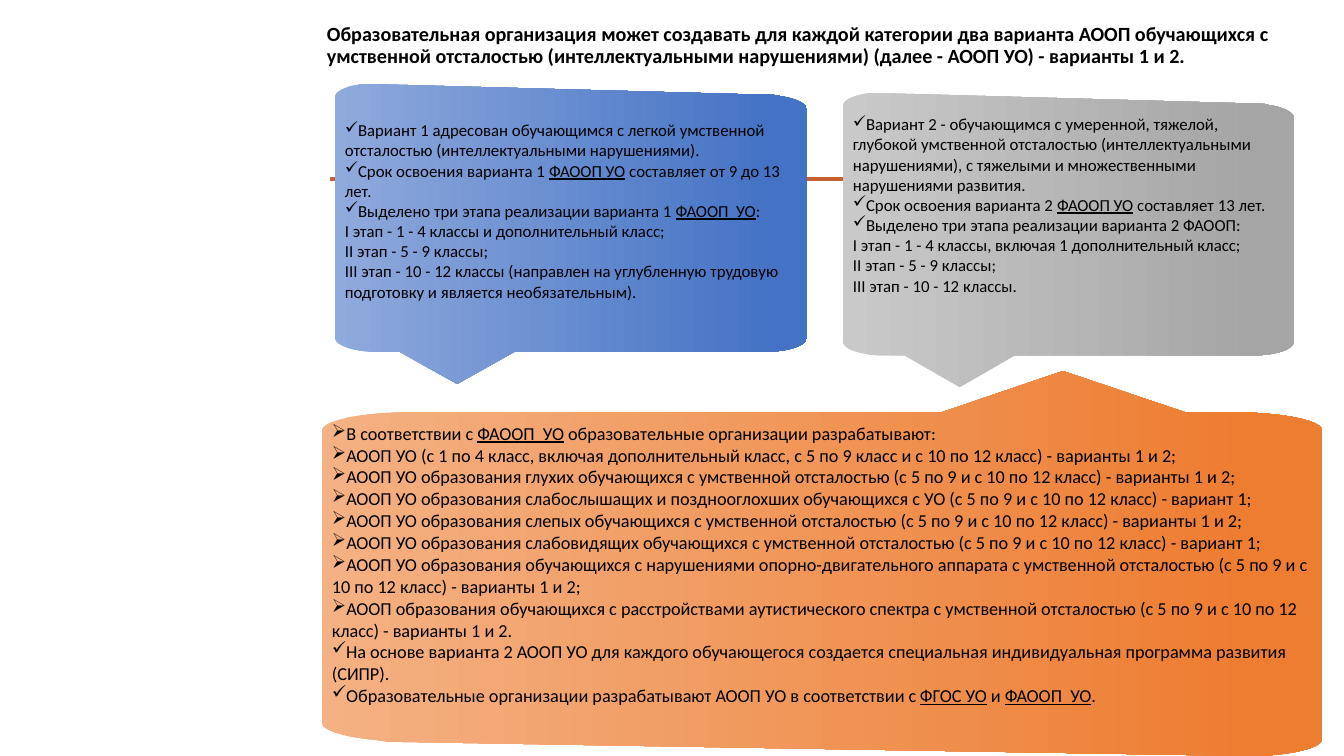
from lxml import etree
from pptx import Presentation, util as u
from pptx.dml.color import RGBColor
from pptx.enum import shapes, text
from pptx.oxml.ns import qn

PX = 914400 / 100.8  # EMU in one px
FONT = "Calibri"
BLACK = RGBColor(0x00, 0x00, 0x00)
RUST = RGBColor(0xC5, 0x60, 0x31)
BLUES = RGBColor(0x8F, 0xAA, 0xDC), RGBColor(0x44, 0x72, 0xC4)
GREYS = RGBColor(0xC9, 0xC9, 0xC9), RGBColor(0xA5, 0xA5, 0xA5)
ORANGES = RGBColor(0xF4, 0xB1, 0x83), RGBColor(0xED, 0x7D, 0x31)

# Callout outline in thousandths of its box: one point is a straight edge,
# three are a Bezier curve.
START = (75, 0)
OUTLINE = [
    [(934, 37)], [(944, 41)],
    [(977, 48), (1000, 66), (1000, 85)], [(1000, 846)],
    [(1000, 872), (960, 893), (908, 893)],
    [(380, 893)], [(259, 1000)], [(137, 893)], [(92, 893)],
    [(40, 893), (0, 872), (0, 846)], [(0, 44)],
    [(0, 23), (24, 7), (56, 1)],
]
CURVE_STEPS = 12

TITLE = ("Образовательная организация может создавать для каждой категории два варианта "
         "АООП обучающихся с умственной отсталостью (интеллектуальными нарушениями) "
         "(далее - АООП УО) - варианты 1 и 2.")

# Each line is (bullet, words); words between underscores are underlined.
VARIANT_1 = [
    ("✓", "Вариант 1 адресован обучающимся с легкой умственной отсталостью (интеллектуальными нарушениями)."),
    ("✓", "Срок освоения варианта 1 _ФАООП УО_ составляет от 9 до 13 лет."),
    ("✓", "Выделено три этапа реализации варианта 1 _ФАООП  УО_:"),
    ("", "I этап - 1 - 4 классы и дополнительный класс;"),
    ("", "II этап - 5 - 9 классы;"),
    ("", "III этап - 10 - 12 классы (направлен на углубленную трудовую подготовку и является необязательным)."),
]
VARIANT_2 = [
    ("✓", "Вариант 2 - обучающимся с умеренной, тяжелой, глубокой умственной отсталостью "
          "(интеллектуальными нарушениями), с тяжелыми и множественными нарушениями развития."),
    ("✓", "Срок освоения варианта 2 _ФАООП УО_ составляет 13 лет."),
    ("✓", "Выделено три этапа реализации варианта 2 ФАООП:"),
    ("", "I этап - 1 - 4 классы, включая 1 дополнительный класс;"),
    ("", "II этап - 5 - 9 классы;"),
    ("", "III этап - 10 - 12 классы."),
]
PROGRAMMES = [
    ("➢", "В соответствии с _ФАООП  УО_ образовательные организации разрабатывают:"),
    ("➢", "АООП УО (с 1 по 4 класс, включая дополнительный класс, с 5 по 9 класс и с 10 по 12 класс) - варианты 1 и 2;"),
    ("➢", "АООП УО образования глухих обучающихся с умственной отсталостью (с 5 по 9 и с 10 по 12 класс) - варианты 1 и 2;"),
    ("➢", "АООП УО образования слабослышащих и позднооглохших обучающихся с УО (с 5 по 9 и с 10 по 12 класс) - вариант 1;"),
    ("➢", "АООП УО образования слепых обучающихся с умственной отсталостью (с 5 по 9 и с 10 по 12 класс) - варианты 1 и 2;"),
    ("➢", "АООП УО образования слабовидящих обучающихся с умственной отсталостью (с 5 по 9 и с 10 по 12 класс) - вариант 1;"),
    ("➢", "АООП УО образования обучающихся с нарушениями опорно-двигательного аппарата "
          "с умственной отсталостью (с 5 по 9 и с 10 по 12 класс) - варианты 1 и 2;"),
    ("➢", "АООП образования обучающихся с расстройствами аутистического спектра "
          "с умственной отсталостью (с 5 по 9 и с 10 по 12 класс) - варианты 1 и 2."),
    ("✓", "На основе варианта 2 АООП УО для каждого обучающегося создается "
          "специальная индивидуальная программа развития (СИПР)."),
    ("✓", "Образовательные организации разрабатывают АООП УО в соответствии с _ФГОС УО_ и _ФАООП  УО_."),
]


def px(n):
    return u.Emu(round(n * PX))


def outline_points():
    """Points of the callout outline, with its curves cut into short edges."""
    points = [START]
    for segment in OUTLINE:
        if len(segment) == 1:
            points += segment
            continue
        controls = [points[-1], *segment]
        for step in range(1, CURVE_STEPS + 1):
            t = step / CURVE_STEPS
            weights = (1 - t) ** 3, 3 * t * (1 - t) ** 2, 3 * t * t * (1 - t), t ** 3
            points.append(tuple(sum(k * c[axis] for k, c in zip(weights, controls))
                                for axis in (0, 1)))
    return points


def style_font(p, size, bold=False):
    p.font.name = FONT
    p.font.size = u.Pt(size)
    p.font.bold = bold
    p.font.color.rgb = BLACK


def add_lines(tf, lines, size):
    for i, (bullet, words) in enumerate(lines):
        p = tf.paragraphs[0] if i == 0 else tf.add_paragraph()
        p.alignment = text.PP_ALIGN.LEFT
        if bullet:
            etree.SubElement(p._p.get_or_add_pPr(), qn("a:buChar")).set("char", bullet)
        style_font(p, size)
        for j, part in enumerate(words.split("_")):
            r = p.add_run()
            r.text = part
            if j % 2:
                r.font.underline = True


def add_callout(s, x, y, w, h, colors, lines, size, text_top, turned=False):
    """Gradient callout; turned rotates the outline by half a turn, not the text."""
    points = outline_points()
    if turned:
        points = [(1000 - a, 1000 - b) for a, b in points]
    corners = [(px(x + a * w / 1000), px(y + b * h / 1000)) for a, b in points]
    builder = s.shapes.build_freeform(*corners[0])
    builder.add_line_segments(corners[1:], close=True)
    sp = builder.convert_to_shape()
    sp.shadow.inherit = False
    sp.line.fill.background()
    sp.fill.gradient()
    sp.fill.gradient_angle = 0
    for stop, position, color in zip(sp.fill.gradient_stops, (0, 0.93), colors):
        stop.position = position
        stop.color.rgb = color
    tf = sp.text_frame
    tf.word_wrap = True
    tf.vertical_anchor = text.MSO_ANCHOR.TOP
    tf.margin_top = px(text_top)
    add_lines(tf, lines, size)


def add_title(s, x, y, w, h):
    tf = s.shapes.add_textbox(px(x), px(y), px(w), px(h)).text_frame
    tf.word_wrap = True
    tf.vertical_anchor = text.MSO_ANCHOR.MIDDLE
    p = tf.paragraphs[0]
    p.text = TITLE
    p.line_spacing = 0.9
    style_font(p, 14.4, bold=True)


def add_rule(s, x, y, w):
    line = s.shapes.add_connector(shapes.MSO_CONNECTOR.STRAIGHT, px(x), px(y), px(x + w), px(y))
    line.line.color.rgb = RUST
    line.line.width = u.Pt(2.5)
    etree.SubElement(line._element.spPr, qn("a:effectLst"))


def main():
    prs = Presentation()
    prs.slide_width, prs.slide_height = px(1344), px(756)
    s = prs.slides.add_slide(prs.slide_layouts[6])
    add_rule(s, 330, 179, 579)
    add_title(s, 317, 10, 994, 72)
    add_callout(s, 335, 84, 472, 300, BLUES, VARIANT_1, 12, 36)
    add_callout(s, 843, 93, 451, 294, GREYS, VARIANT_2, 12, 21)
    add_callout(s, 322, 371, 1000, 385, ORANGES, PROGRAMMES, 13, 51, turned=True)
    prs.save("out.pptx")


if __name__ == "__main__":
    main()
